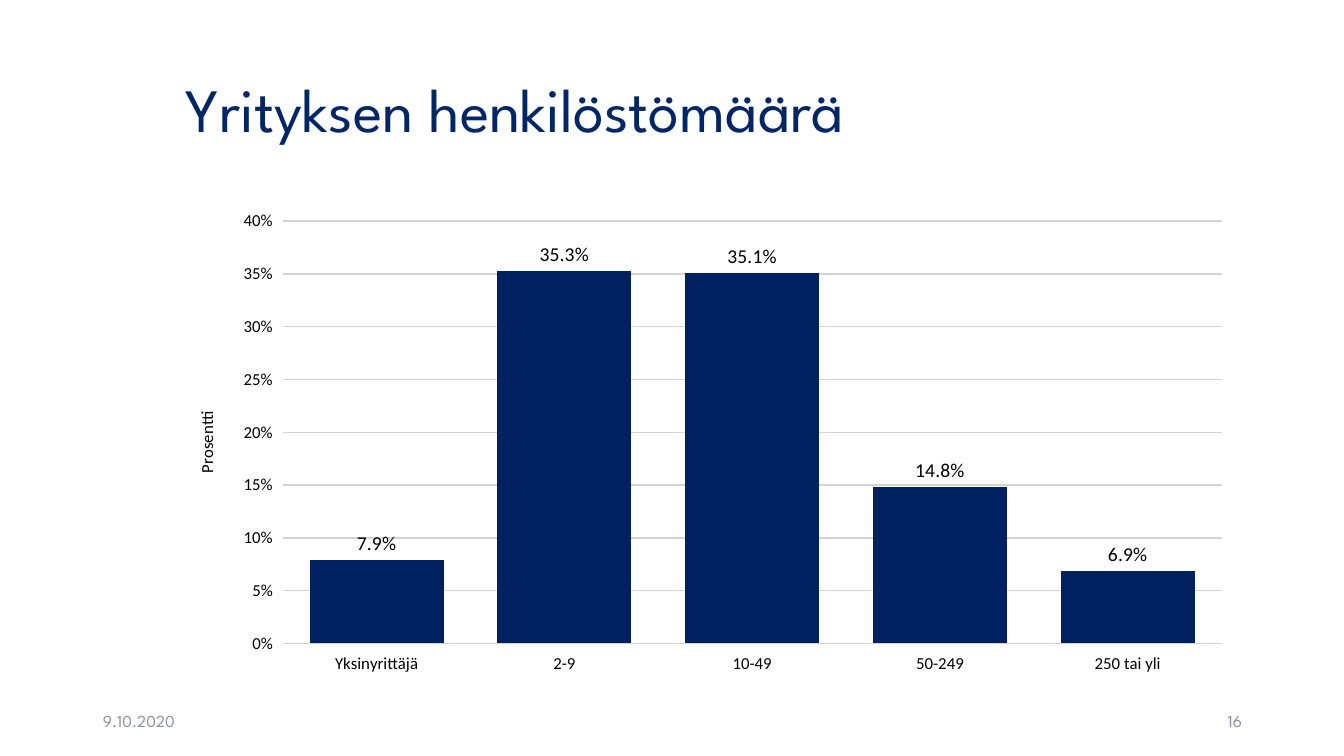
from lxml import etree
from pptx import Presentation
from pptx import util as u
from pptx.chart.data import CategoryChartData
from pptx.dml.color import RGBColor
from pptx.enum import chart as charts, text
from pptx.oxml.ns import qn

PX = 914400 / 100.8
COLORS = {"title": "002663", "footer": "8C8E9F", "bar": "002060",
          "grid": "D3D3D3", "label": "000000", "paper": "FFFFFF"}


def px(*lengths):
    return [u.Emu(round(length * PX)) for length in lengths]


def add_text(words, place, size, color, align=text.PP_ALIGN.LEFT, spacing=1.0):
    box = page.shapes.add_textbox(*px(*place))
    frame = box.text_frame
    frame.word_wrap = True
    frame.vertical_anchor = text.MSO_ANCHOR.MIDDLE
    para = frame.paragraphs[0]
    para.alignment = align
    para.line_spacing = spacing
    span = para.add_run()
    span.text = words
    span.font.name = "League Spartan"
    span.font.size = u.Pt(size)
    span.font.color.rgb = RGBColor.from_string(COLORS[color])


deck = Presentation()
deck.slide_width, deck.slide_height = px(1344, 756)
page = deck.slides.add_slide(deck.slide_layouts[6])

# Title and footer
add_text("Yrityksen henkilöstömäärä", (176, 40, 1067, 146), 44, "title", spacing=0.9)
add_text("9.10.2020", (93, 701, 302, 40), 12, "footer")
add_text("16", (950, 701, 302, 40), 12, "footer", align=text.PP_ALIGN.RIGHT)

# Column chart
data = CategoryChartData(number_format="0.0%")
data.categories = ["Yksinyrittäjä", "2-9", "10-49", "50-249", "250 tai yli"]
data.add_series("Osuus", (0.079, 0.353, 0.351, 0.148, 0.069))
chart = page.shapes.add_chart(
    charts.XL_CHART_TYPE.COLUMN_CLUSTERED, *px(176, 202, 1067, 480), data).chart
chart.has_legend = False
chart.has_title = False
chart.font.name = "Calibri"
chart.font.size = u.Pt(12)
chart.font.color.rgb = RGBColor.from_string(COLORS["label"])

# Axes
for axis in (chart.category_axis, chart.value_axis):
    axis.format.line.fill.background()
    axis.major_tick_mark = charts.XL_TICK_MARK.OUTSIDE
    axis.tick_labels.font.size = u.Pt(12)
percent = chart.value_axis
percent.minimum_scale, percent.maximum_scale, percent.major_unit = 0, 0.4, 0.05
percent.tick_labels.number_format = "0%"
percent.tick_labels.number_format_is_linked = False
percent.has_major_gridlines = True
grid = percent.major_gridlines.format.line
grid.color.rgb = RGBColor.from_string(COLORS["grid"])
grid.width = u.Pt(1)
para = percent.axis_title.text_frame.paragraphs[0]
span = para.add_run()
span.text = "Prosentti"
span.font.name = "Calibri"
span.font.size = u.Pt(12)
span.font.bold = False
span.font.color.rgb = RGBColor.from_string(COLORS["label"])

# Bars and their labels
plot = chart.plots[0]
plot.gap_width = 40
plot.vary_by_categories = False
bars = plot.series[0]
bars.format.fill.solid()
bars.format.fill.fore_color.rgb = RGBColor.from_string(COLORS["bar"])
labels = bars.data_labels
labels.show_value = True
labels.position = charts.XL_LABEL_POSITION.OUTSIDE_END
labels.number_format = "0.0%"
labels.number_format_is_linked = False
labels.font.name = "Calibri"
labels.font.size = u.Pt(14)
labels.font.color.rgb = RGBColor.from_string(COLORS["label"])

# Inner plot area as shares of the chart
area = chart.element.find(".//" + qn("c:plotArea"))
for old in area.findall(qn("c:layout")):
    area.remove(old)
layout = etree.Element(qn("c:layout"))
manual = etree.SubElement(layout, qn("c:manualLayout"))
for tag, value in (("layoutTarget", "inner"), ("xMode", "edge"), ("yMode", "edge"),
                   ("x", 0.1), ("y", 0.04), ("w", 0.88), ("h", 0.88)):
    etree.SubElement(manual, qn("c:" + tag)).set("val", str(value))
area.insert(0, layout)
fill = etree.SubElement(etree.SubElement(area, qn("c:spPr")), qn("a:solidFill"))
etree.SubElement(fill, qn("a:srgbClr")).set("val", COLORS["paper"])

deck.save("out.pptx")
